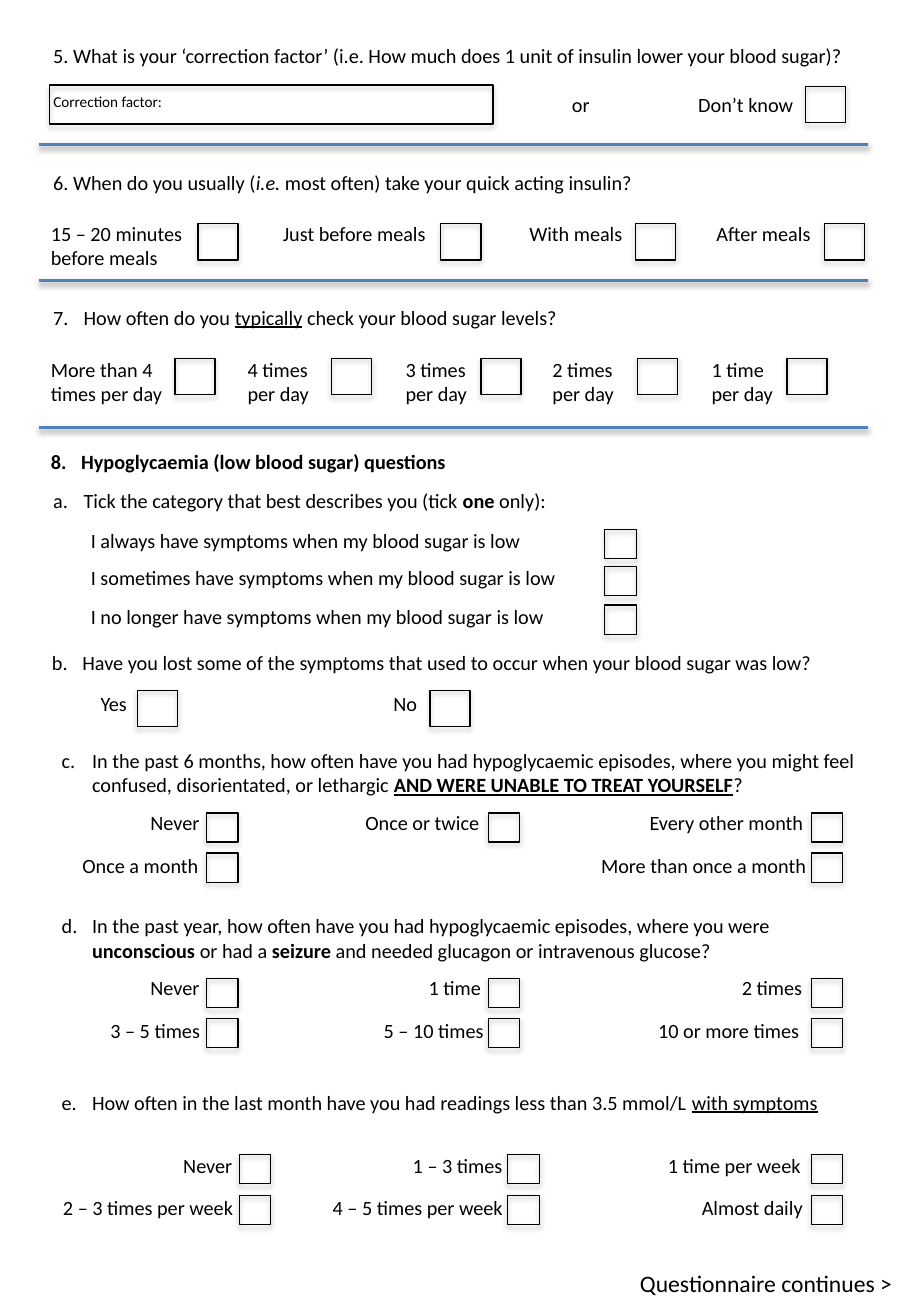
from dataclasses import dataclass

from lxml import etree
from pptx import Presentation
from pptx import util as u
from pptx.dml.color import RGBColor
from pptx.enum import shapes, text
from pptx.oxml.ns import qn


@dataclass(frozen=True)
class Theme:
    font: str = "Calibri"
    ink: str = "000000"
    rule: str = "4F81BD"
    body: int = 12
    small: int = 9
    footer: int = 14
    box_line: float = 0.75
    rule_line: float = 2


THEME = Theme()
BIG = (0.33, 0.3)
SMALL = (0.26, 0.24)
PLAIN = ""
LETTERS = "alphaLcPeriod"
NUMBERS = "arabicPeriod"


def add_shadow(shape, opacity, distance):
    """Give the shape a soft shadow straight below it."""
    effects = etree.SubElement(shape._element.spPr, qn("a:effectLst"))
    shadow = etree.SubElement(
        effects, qn("a:outerShdw"), blurRad=str(u.Pt(3.1)), dist=str(u.Pt(distance)),
        dir="5400000", rotWithShape="0")
    color = etree.SubElement(shadow, qn("a:srgbClr"), val=THEME.ink)
    etree.SubElement(color, qn("a:alpha"), val=str(opacity * 1000))


def add_text(page, spans, left, top, width, height=0.3, size=THEME.body,
             numbering=None, wrap=True):
    """Spans are (words, style) pairs, style being any of the letters b, i, u."""
    box = page.shapes.add_textbox(
        u.Inches(left), u.Inches(top), u.Inches(width), u.Inches(height))
    frame = box.text_frame
    frame.word_wrap = wrap
    frame.auto_size = text.MSO_AUTO_SIZE.SHAPE_TO_FIT_TEXT
    para = frame.paragraphs[0]
    if numbering:
        kind, start = numbering
        props = para._p.get_or_add_pPr()
        props.set("marL", str(u.Inches(0.25)))
        props.set("indent", str(u.Inches(-0.25)))
        etree.SubElement(props, qn("a:buFont"), typeface="+mj-lt")
        etree.SubElement(props, qn("a:buAutoNum"), type=kind, startAt=str(start))
    for words, style in spans:
        span = para.add_run()
        span.text = words
        font = span.font
        font.name = THEME.font
        font.size = u.Pt(size)
        font.color.rgb = RGBColor.from_string(THEME.ink)
        font.bold = "b" in style
        font.italic = "i" in style
        font.underline = "u" in style


def add_box(page, left, top, size):
    box = page.shapes.add_shape(
        shapes.MSO_SHAPE.RECTANGLE, u.Inches(left), u.Inches(top),
        u.Inches(size[0]), u.Inches(size[1]))
    box.fill.background()
    box.line.color.rgb = RGBColor.from_string(THEME.ink)
    box.line.width = u.Pt(THEME.box_line)
    add_shadow(box, 35, 1.8)


def add_rule(page, top):
    rule = page.shapes.add_connector(
        shapes.MSO_CONNECTOR.STRAIGHT, u.Inches(0.32), u.Inches(top),
        u.Inches(7.15), u.Inches(top))
    rule.line.color.rgb = RGBColor.from_string(THEME.rule)
    rule.line.width = u.Pt(THEME.rule_line)
    add_shadow(rule, 38, 1.6)


def add_options(page, top, options, size=SMALL, drop=0.06, height=0.3):
    """Options are (label, label left, label width, box left); boxes sit drop below top."""
    for label, left, width, box_left in options:
        add_text(page, [(label, PLAIN)], left, top, width, height)
        add_box(page, box_left, top + drop, size)


def add_insulin_questions(page):
    add_text(page, [("5. What is your ‘correction factor’ (i.e. How much does 1 unit "
                     "of insulin lower your blood sugar)?", PLAIN)], 0.34, 0.31, 6.83)
    add_box(page, 0.41, 0.7, (3.65, 0.32))
    add_text(page, [("Correction factor:", PLAIN)], 0.34, 0.71, 1.11, 0.25, THEME.small)
    add_text(page, [("or", PLAIN)], 4.61, 0.71, 0.5)
    add_options(page, 0.71, [("Don’t know", 5.65, 1.1, 6.63)], BIG, 0)
    add_rule(page, 1.19)

    add_text(page, [("6. When do you usually (", PLAIN), ("i.e. ", "i"),
                    ("most often) take your quick acting insulin?", PLAIN)],
             0.34, 1.35, 6.83)
    add_options(page, 1.77, [
        ("15 – 20 minutes before meals", 0.32, 1.47, 1.63),
        ("Just before meals", 2.23, 1.47, 3.63),
        ("With meals", 4.26, 1.47, 5.23),
        ("After meals", 5.8, 1.17, 6.79)], BIG, 0.07)
    add_rule(page, 2.31)

    add_text(page, [("How often do you ", PLAIN), ("typically", "u"),
                    (" check your blood sugar levels?", PLAIN)],
             0.34, 2.46, 6.83, numbering=(NUMBERS, 7))
    add_options(page, 2.89, [
        ("More than 4 times per day", 0.32, 1.13, 1.44),
        ("4 times per day", 1.94, 0.87, 2.73),
        ("3 times per day", 3.24, 0.95, 3.96),
        ("2 times per day", 4.45, 0.87, 5.25),
        ("1 time per day", 5.76, 0.87, 6.48)], BIG, height=0.5)
    add_rule(page, 3.52)


def add_symptom_questions(page):
    add_text(page, [("Hypoglycaemia (low blood sugar) questions", "b")],
             0.32, 3.65, 6.83, numbering=(NUMBERS, 8))
    add_text(page, [("Tick the category that best describes you (tick ", PLAIN),
                    ("one", "b"), (" only):", PLAIN)],
             0.34, 3.97, 6.83, numbering=(LETTERS, 1))
    for top, frequency in ((4.3, "always"), (4.6, "sometimes"), (4.92, "no longer")):
        label = f"I {frequency} have symptoms when my blood sugar is low"
        add_options(page, top, [(label, 0.65, 4.26, 4.98)])

    add_text(page, [("Have you lost some of the symptoms that used to occur when your "
                     "blood sugar was low?", PLAIN)],
             0.33, 5.3, 6.83, numbering=(LETTERS, 2))
    add_options(page, 5.64, [("Yes", 0.73, 0.73, 1.13), ("No", 3.14, 0.73, 3.54)],
                BIG, 0.04)


def add_frequency_questions(page):
    add_text(page, [("In the past 6 months, how often have you had hypoglycaemic episodes, "
                     "where you might feel confused, disorientated, or lethargic ", PLAIN),
                    ("AND WERE UNABLE TO TREAT YOURSELF", "bu"), ("?", PLAIN)],
             0.41, 6.11, 6.83, 0.5, numbering=(LETTERS, 3))
    add_options(page, 6.62, [
        ("Never", 1.14, 0.68, 1.7),
        ("Once or twice", 2.91, 1.23, 4.02),
        ("Every other month", 5.25, 2.1, 6.68)], drop=0.07)
    add_options(page, 6.97, [
        ("Once a month", 0.58, 1.17, 1.7),
        ("More than once a month", 4.85, 2.03, 6.68)], drop=0.05)

    add_text(page, [("In the past year, how often have you had hypoglycaemic episodes, "
                     "where you were ", PLAIN), ("unconscious", "b"),
                    (" or had a ", PLAIN), ("seizure", "b"),
                    (" and needed glucagon or intravenous glucose?", PLAIN)],
             0.41, 7.47, 6.83, 0.5, numbering=(LETTERS, 4))
    add_options(page, 7.98, [
        ("Never", 1.14, 0.68, 1.7),
        ("1 time", 3.43, 0.71, 4.02),
        ("2 times", 6.01, 1.33, 6.68)], drop=0.07)
    add_options(page, 8.33, [
        ("3 – 5 times", 0.81, 0.95, 1.7),
        ("5 – 10 times", 3.06, 1.08, 4.02),
        ("10 or more times", 5.32, 1.56, 6.68)], drop=0.05)

    add_text(page, [("How often in the last month have you had readings less than "
                     "3.5 mmol/L ", PLAIN), ("with symptoms", "u")],
             0.41, 8.92, 6.83, numbering=(LETTERS, 5))
    add_options(page, 9.44, [
        ("Never", 1.41, 0.68, 1.97),
        ("1 – 3 times", 3.3, 1, 4.18),
        ("1 time per week", 5.4, 1.95, 6.68)])
    add_options(page, 9.79, [
        ("2 – 3 times per week", 0.42, 1.61, 1.97),
        ("4 – 5 times per week", 2.64, 1.62, 4.18),
        ("Almost daily", 5.68, 1.56, 6.68)], drop=0.05)


def main():
    deck = Presentation()
    deck.slide_width = u.Inches(7.5)
    deck.slide_height = u.Inches(10.83)
    page = deck.slides.add_slide(deck.slide_layouts.get_by_name("Blank"))
    add_insulin_questions(page)
    add_symptom_questions(page)
    add_frequency_questions(page)
    add_text(page, [("Questionnaire continues >", PLAIN)], 5.17, 10.39, 2.31, 0.34,
             THEME.footer, wrap=False)
    deck.save("out.pptx")


if __name__ == "__main__":
    main()
